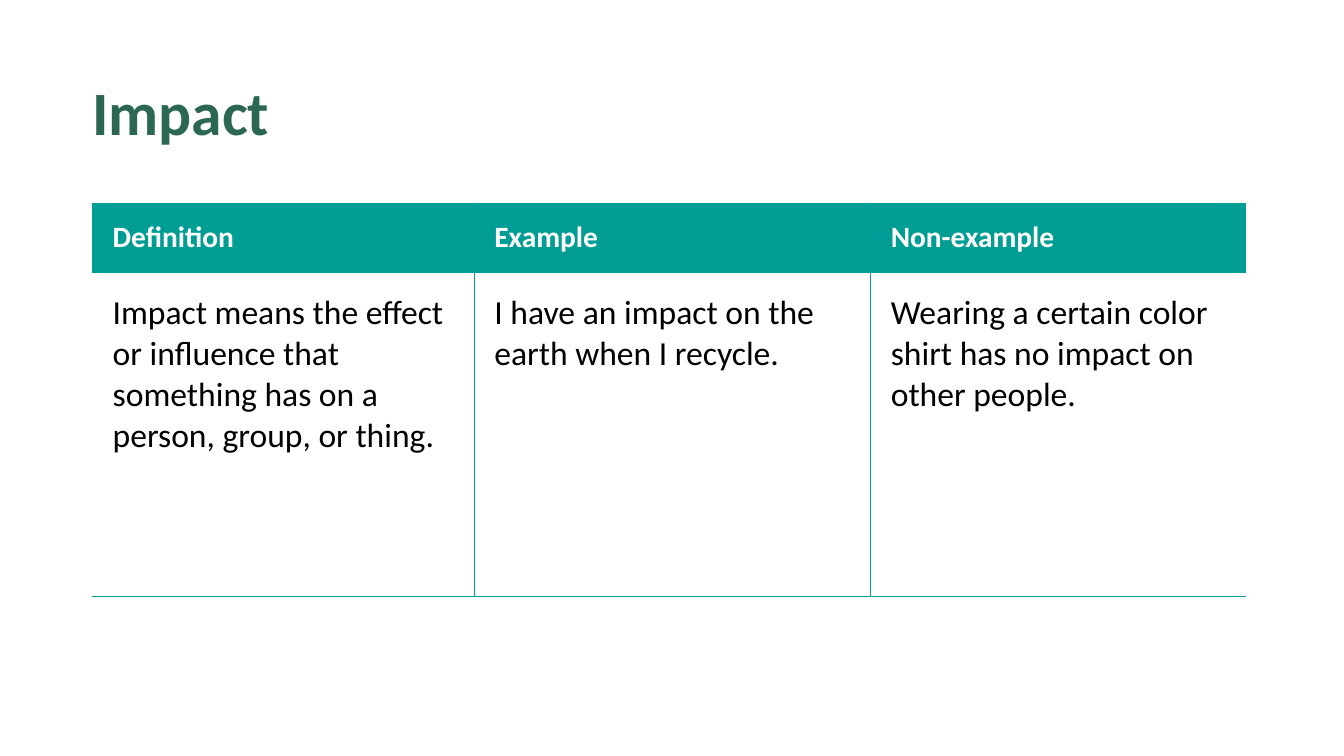
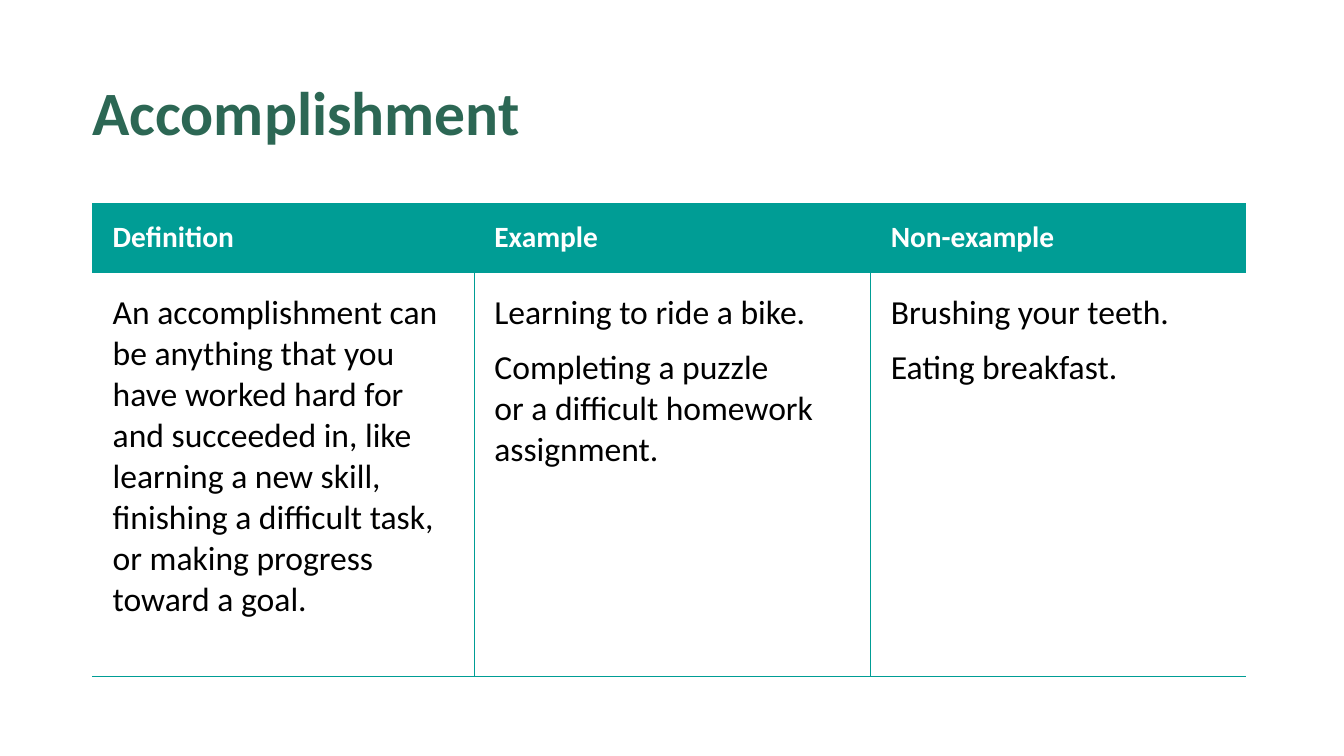
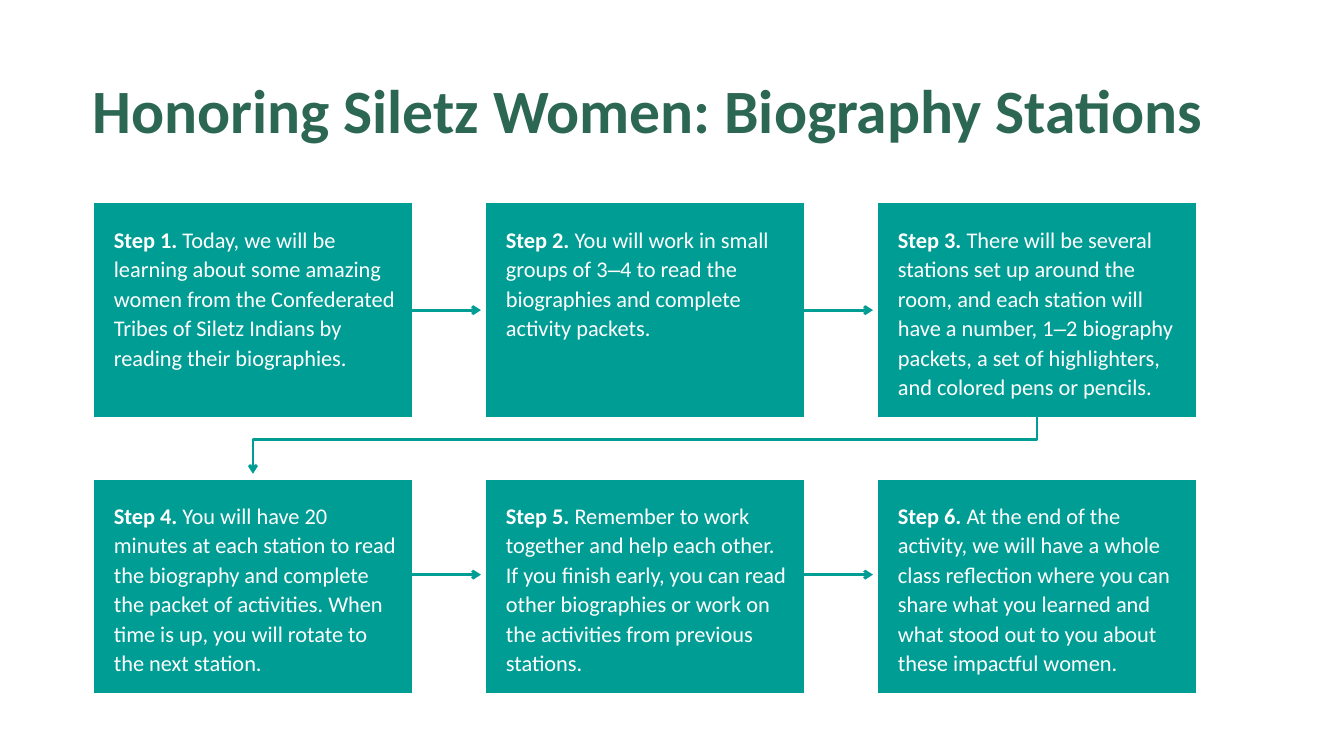
from lxml import etree
from pptx import Presentation
from pptx.dml.color import RGBColor
from pptx.enum.shapes import MSO_CONNECTOR, MSO_SHAPE
from pptx.enum.text import MSO_ANCHOR, PP_ALIGN
from pptx.oxml.ns import qn
from pptx.util import Cm, Pt

TEAL = RGBColor(0x00, 0x9D, 0x95)
GREEN = RGBColor(0x2C, 0x67, 0x54)
WHITE = RGBColor(0xFF, 0xFF, 0xFF)
BLACK = RGBColor(0x00, 0x00, 0x00)
STRAIGHT = MSO_CONNECTOR.STRAIGHT
RECTANGLE = MSO_SHAPE.RECTANGLE
TOP, MIDDLE = MSO_ANCHOR.TOP, MSO_ANCHOR.MIDDLE
LEFT = PP_ALIGN.LEFT
RIGHT_SIDE = 3
FONT, DASH_FONT, DASH = "Calibri", "Arial", "‒"

HEADINGS = ["Definition", "Example", "Non-example"]
COLUMN_WIDTHS = [Cm(9.62), Cm(9.99), Cm(9.45)]
HEADER_HEIGHT = Cm(1.73)
TABLE_LEFT, TABLE_TOP = Cm(2.33), Cm(5.13)

STEP_COLUMNS = 3
STEP_WIDTH, STEP_HEIGHT = Cm(8.03), Cm(5.41)
STEP_PITCH_X, STEP_PITCH_Y = Cm(9.88), Cm(6.96)
ARROW_LENGTH = Cm(1.73)
ARROW_DROPS = [STEP_HEIGHT // 2, Cm(2.41)]

WORDS = [
    ("Impact", Cm(8.18), [
        ["Impact means the effect or influence that something has on a person, group, or thing."],
        ["I have an impact on the earth when I recycle."],
        ["Wearing a certain color shirt has no impact on other people."],
    ]),
    ("Accomplishment", Cm(10.19), [
        ["An accomplishment can be anything that you have worked hard for and succeeded in, "
         "like learning a new skill, finishing a difficult task, or making progress toward a goal."],
        ["Learning to ride a bike.",
         "Completing a puzzle \nor a difficult homework assignment."],
        ["Brushing your teeth.", "Eating breakfast."],
    ]),
]
STEPS = [
    "Today, we will be learning about some amazing women from the Confederated Tribes "
    "of Siletz Indians by reading their biographies.",
    "You will work in small groups of 3‒4 to read the biographies and complete activity packets.",
    "There will be several stations set up around the room, and each station will have a number, "
    "1‒2 biography packets, a set of highlighters, and colored pens or pencils.",
    "You will have 20 minutes at each station to read the biography and complete the packet of "
    "activities. When time is up, you will rotate to the next station.",
    "Remember to work together and help each other. If you finish early, you can read other "
    "biographies or work on the activities from previous stations.",
    "At the end of the activity, we will have a whole class reflection where you can share what "
    "you learned and what stood out to you about these impactful women.",
]


def set_font(para, size, color, bold=False):
    """Set the shared typeface on a paragraph."""
    para.alignment = LEFT
    font = para.font
    font.name, font.size, font.bold = FONT, Pt(size), bold
    font.color.rgb = color


def set_margins(holder, left, top, right, bottom):
    """Set the inner margins of a cell or text frame."""
    holder.margin_left, holder.margin_top = left, top
    holder.margin_right, holder.margin_bottom = right, bottom


def add_title(page, text, top=Cm(2.08), width=Cm(28.65), height=Cm(1.65)):
    """Place the slide title."""
    frame = page.shapes.add_textbox(TABLE_LEFT, top, width, height).text_frame
    frame.word_wrap = True
    frame.vertical_anchor = TOP
    set_margins(frame, 0, 0, 0, 0)
    para = frame.paragraphs[0]
    para.text = text
    para.line_spacing = 0.9
    set_font(para, 44, GREEN, True)


def set_borders(cell, column):
    """Draw teal cell borders, leaving the table's outer sides open."""
    shown = {"lnL": column > 0, "lnR": column < len(HEADINGS) - 1, "lnT": True, "lnB": True}
    properties = cell._tc.get_or_add_tcPr()
    for position, (tag, visible) in enumerate(shown.items()):
        line = etree.Element(qn("a:" + tag), w=str(Pt(1)))
        if visible:
            fill = etree.SubElement(line, qn("a:solidFill"))
            etree.SubElement(fill, qn("a:srgbClr"), val=str(TEAL))
        else:
            etree.SubElement(line, qn("a:noFill"))
        properties.insert(position, line)


def fill_cell(cell, column, texts, is_header):
    """Write and style one table cell."""
    if is_header:
        cell.fill.solid()
        cell.fill.fore_color.rgb = TEAL
        cell.vertical_anchor = MIDDLE
        set_margins(cell, Cm(0.51), Cm(0.25), Cm(0.51), Cm(0.25))
    else:
        cell.fill.background()
        cell.vertical_anchor = TOP
        set_margins(cell, Cm(0.51), Cm(0.51), Cm(0.51), Cm(0.38))
    frame = cell.text_frame
    for index, text in enumerate(texts):
        para = frame.add_paragraph() if index else frame.paragraphs[0]
        para.text = text
        if is_header:
            set_font(para, 21, WHITE, True)
        else:
            set_font(para, 24, BLACK)
        if len(texts) > 1:
            para.space_after = Pt(10)
    set_borders(cell, column)


def add_word_table(page, left, top, body_height, body):
    """Place the table with a definition, an example and a non-example."""
    table = page.shapes.add_table(2, len(HEADINGS), left, top, sum(COLUMN_WIDTHS),
                                  HEADER_HEIGHT + body_height).table
    table.first_row = table.horz_banding = False
    table.rows[0].height, table.rows[1].height = HEADER_HEIGHT, body_height
    for column, width in enumerate(COLUMN_WIDTHS):
        table.columns[column].width = width
        fill_cell(table.cell(0, column), column, [HEADINGS[column]], True)
        fill_cell(table.cell(1, column), column, body[column], False)


def add_step(page, left, top, number, text):
    """Place one numbered step box and return it."""
    box = page.shapes.add_shape(RECTANGLE, left, top, STEP_WIDTH, STEP_HEIGHT)
    box.shadow.inherit = False
    box.fill.solid()
    box.fill.fore_color.rgb = TEAL
    box.line.color.rgb = WHITE
    box.line.width = Pt(1)
    frame = box.text_frame
    frame.word_wrap = True
    frame.vertical_anchor = TOP
    set_margins(frame, Cm(0.51), Cm(0.51), Cm(0.41), Cm(0.41))
    para = frame.paragraphs[0]
    para.line_spacing = 1.1
    set_font(para, 16, WHITE)
    label = para.add_run()
    label.text = f"Step {number}. "
    label.font.bold = True
    for part in filter(None, text.partition(DASH)):
        span = para.add_run()
        span.text = part
        if part == DASH:
            span.font.name = DASH_FONT
    return box


def style_arrow(arrow):
    """Give a line the shared arrow look without a shadow."""
    arrow.line.color.rgb = TEAL
    arrow.line.width = Pt(2)
    properties = arrow._element.spPr
    etree.SubElement(properties.find(qn("a:ln")), qn("a:tailEnd"), type="arrow")
    etree.SubElement(properties, qn("a:effectLst"))


def add_step_arrow(page, box, drop):
    """Draw the arrow that leaves the right side of a step box."""
    start, level = box.left + box.width, box.top + drop
    arrow = page.shapes.add_connector(STRAIGHT, start, level, start + ARROW_LENGTH, level)
    if drop == box.height // 2:
        arrow.begin_connect(box, RIGHT_SIDE)
    style_arrow(arrow)


def add_return_arrow(page, source, target):
    """Draw the bent arrow from the end of one row to the start of the next."""
    start_x = source.left + source.width // 2
    end_x = target.left + target.width // 2
    start_y = source.top + source.height
    bend_y = start_y + Cm(0.56)
    builder = page.shapes.build_freeform(start_x, start_y)
    builder.add_line_segments(
        [(start_x, bend_y), (end_x, bend_y), (end_x, target.top - Cm(0.13))], close=False)
    arrow = builder.convert_to_shape()
    arrow.fill.background()
    style_arrow(arrow)


def add_steps(page, left, top):
    """Place the grid of steps and the arrows between them."""
    boxes = []
    for index, text in enumerate(STEPS):
        row, column = divmod(index, STEP_COLUMNS)
        box = add_step(page, left + column * STEP_PITCH_X, top + row * STEP_PITCH_Y,
                       index + 1, text)
        boxes.append(box)
        if column < STEP_COLUMNS - 1:
            add_step_arrow(page, box, ARROW_DROPS[row])
    add_return_arrow(page, boxes[STEP_COLUMNS - 1], boxes[STEP_COLUMNS])


def main():
    """Build and save the deck."""
    deck = Presentation()
    deck.slide_width, deck.slide_height = Cm(33.87), Cm(19.05)
    blank = deck.slide_layouts[6]
    for word, body_height, body in WORDS:
        page = deck.slides.add_slide(blank)
        add_word_table(page, TABLE_LEFT, TABLE_TOP, body_height, body)
        add_title(page, word)
    page = deck.slides.add_slide(blank)
    add_steps(page, Cm(2.36), Cm(5.11))
    add_title(page, "Honoring Siletz Women: Biography Stations", Cm(2.03), Cm(28.98), Cm(3.05))
    deck.save("out.pptx")


if __name__ == "__main__":
    main()
